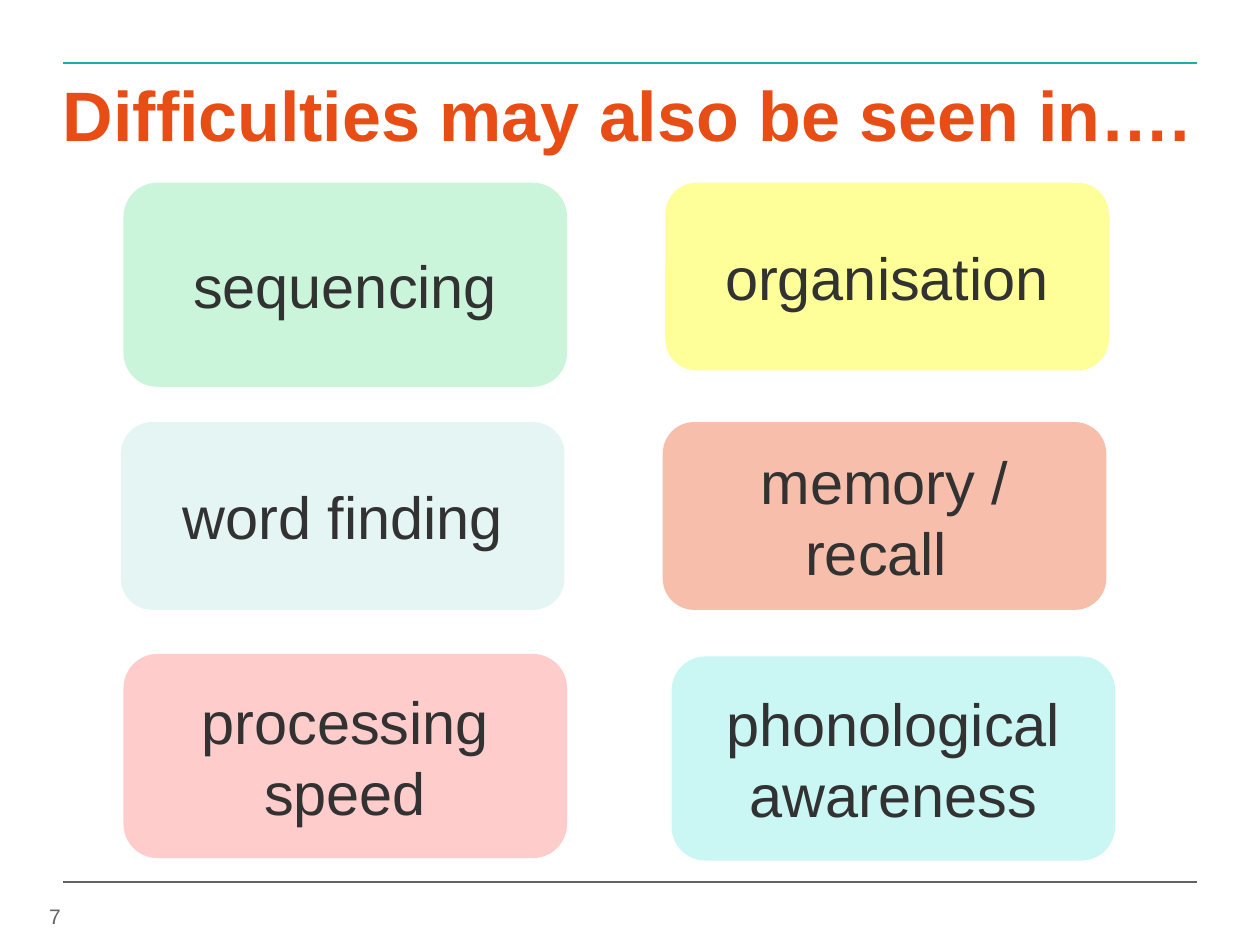
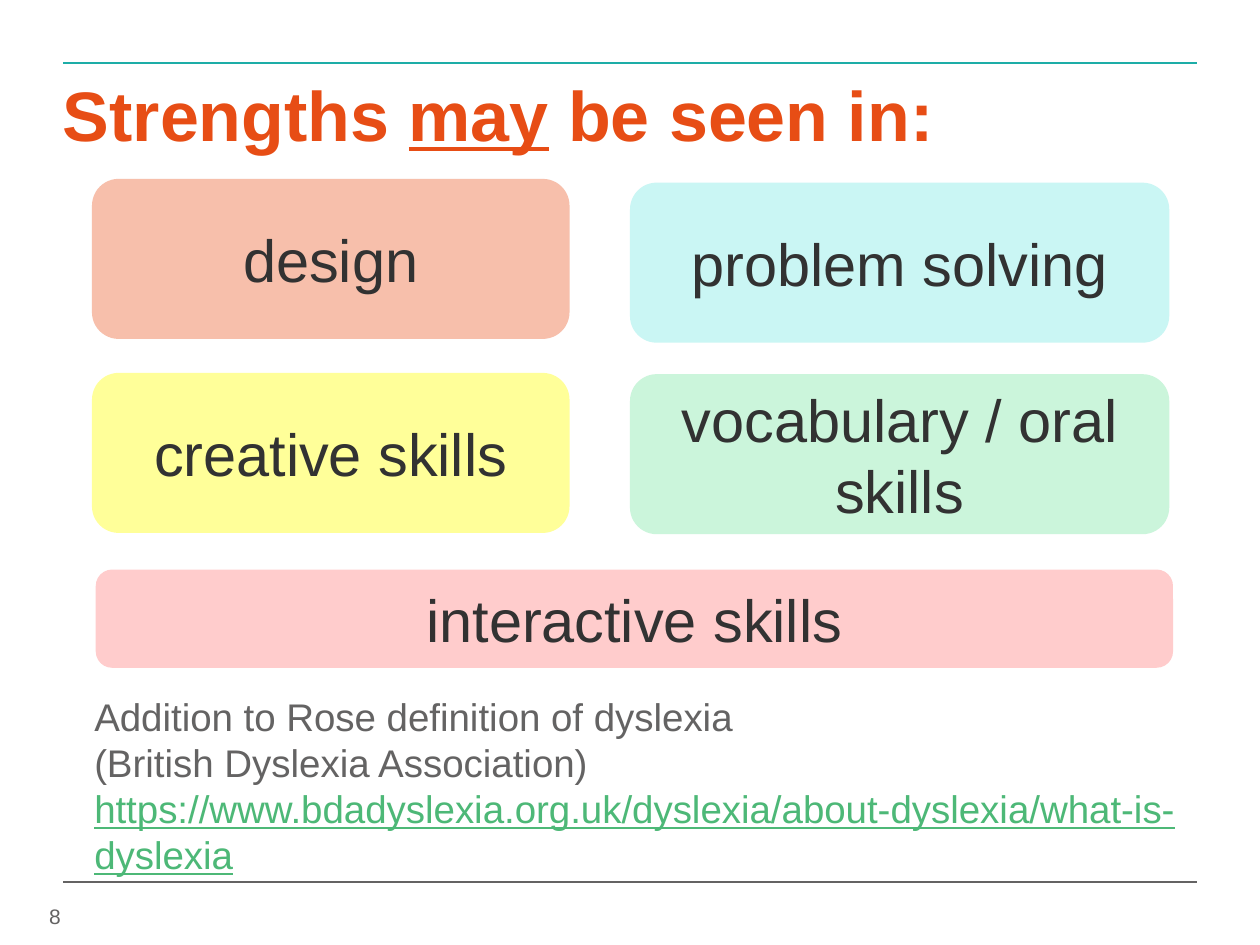
from pptx import Presentation
from pptx.dml.color import RGBColor
from pptx.enum.shapes import MSO_CONNECTOR, MSO_SHAPE
from pptx.enum.text import MSO_ANCHOR, PP_ALIGN
from pptx.oxml.ns import qn
from pptx.util import Inches, Pt
from lxml import etree

STRAIGHT = MSO_CONNECTOR.STRAIGHT
ROUNDED = MSO_SHAPE.ROUNDED_RECTANGLE
MIDDLE = MSO_ANCHOR.MIDDLE
LEFT, CENTER = PP_ALIGN.LEFT, PP_ALIGN.CENTER

TEAL = RGBColor(0x1D, 0xAD, 0xA7)
GREY = RGBColor(0x64, 0x63, 0x63)
ORANGE = RGBColor(0xE7, 0x4D, 0x15)
DARK = RGBColor(0x32, 0x32, 0x32)
LINK = RGBColor(0x4D, 0xB8, 0x77)
SALMON = RGBColor(0xF7, 0xBF, 0xAB)
YELLOW = RGBColor(0xFF, 0xFF, 0x99)
GREEN = RGBColor(0xCB, 0xF5, 0xDB)
MIST = RGBColor(0xE4, 0xF5, 0xF4)
PINK = RGBColor(0xFF, 0xCC, 0xCC)
AQUA = RGBColor(0xCA, 0xF6, 0xF4)

FONT = "Arial"
WIDTH, HEIGHT, MARGIN = 10, 7.5, 0.5
FIRST_NUMBER = 7

SLIDES = [
    {
        "title": [("Difficulties may also be seen in….", False)],
        "columns": [(0.98, 3.52), (5.28, 3.52)],
        "rows": [(1.45, 1.49), (3.35, 1.49), (5.2, 1.62)],
        "cards": [
            ("sequencing", GREEN, 0, 0, (0, 0), 0.13),
            ("organisation", YELLOW, 1, 0, (0, 0), 0),
            ("word finding", MIST, 0, 1, (-0.02, 0), 0),
            ("memory / recall ", SALMON, 1, 1, (-0.02, 0), 0),
            ("processing speed", PINK, 0, 2, (0, -0.01), 0),
            ("phonological awareness", AQUA, 1, 2, (0.05, 0.01), 0),
        ],
        "note": [],
    },
    {
        "title": [("Strengths ", False), ("may", True), (" be seen in:", False)],
        "columns": [(0.73, 3.79), (5, 4.28), (0.76, 8.55)],
        "rows": [(1.42, 1.27), (2.96, 1.27), (4.52, 0.78)],
        "cards": [
            ("design", SALMON, 0, 0, (0, 0), 0),
            ("problem solving", AQUA, 1, 0, (0, 0.03), 0),
            ("creative skills", YELLOW, 0, 1, (0, 0), 0),
            ("vocabulary / oral skills", GREEN, 1, 1, (0, 0.01), 0),
            ("interactive skills", PINK, 2, 2, (0, 0), 0),
        ],
        "note": [
            ("Addition to Rose definition of dyslexia", False),
            ("(British Dyslexia Association)", False),
            ("https://www.bdadyslexia.org.uk/dyslexia/about-dyslexia/what-is-dyslexia", True),
        ],
    },
]


def style_paragraph(p, size, color, align=LEFT, bold=False):
    p.alignment = align
    for r in p.runs:
        r.font.name = FONT
        r.font.size = Pt(size)
        r.font.color.rgb = color
        r.font.bold = bold


def add_text_box(s, left, top, width, height, inset=True):
    box = s.shapes.add_textbox(*map(Inches, (left, top, width, height)))
    tf = box.text_frame
    tf.word_wrap = True
    if not inset:
        tf.margin_left = tf.margin_right = tf.margin_top = tf.margin_bottom = 0
    return tf


def add_rule(s, y, color):
    line = s.shapes.add_connector(
        STRAIGHT, Inches(MARGIN), Inches(y), Inches(WIDTH - MARGIN), Inches(y))
    line.line.color.rgb = color
    line.line.width = Pt(1)
    etree.SubElement(line._element.spPr, qn("a:effectLst"))


def add_frame(s, title, number):
    add_rule(s, MARGIN, TEAL)
    add_rule(s, HEIGHT - MARGIN, GREY)
    p = add_text_box(s, MARGIN, 0.57, WIDTH - 2 * MARGIN, 0.67, False).paragraphs[0]
    for text, underlined in title:
        r = p.add_run()
        r.text = text
        r.font.underline = underlined
    style_paragraph(p, 40, ORANGE, bold=True)
    p = add_text_box(s, 0.39, 7.17, 0.59, 0.21, False).paragraphs[0]
    p.text = str(number)
    style_paragraph(p, 12, GREY)


def add_card(s, text, fill, left, top, width, height):
    sp = s.shapes.add_shape(ROUNDED, *map(Inches, (left, top, width, height)))
    sp.shadow.inherit = False
    sp.fill.solid()
    sp.fill.fore_color.rgb = fill
    sp.line.fill.background()
    tf = sp.text_frame
    tf.word_wrap = True
    tf.vertical_anchor = MIDDLE
    tf.text = text
    style_paragraph(tf.paragraphs[0], 34, DARK, CENTER)


def add_note(s, lines):
    tf = add_text_box(s, 0.65, 5.45, 9, 1.55)
    tf.text = "\n".join(text for text, _ in lines)
    for p, (_, is_link) in zip(tf.paragraphs, lines):
        style_paragraph(p, 22, LINK if is_link else GREY)
        p.runs[0].font.underline = is_link


def main():
    prs = Presentation()
    prs.slide_width, prs.slide_height = Inches(WIDTH), Inches(HEIGHT)
    for number, content in enumerate(SLIDES, FIRST_NUMBER):
        s = prs.slides.add_slide(prs.slide_layouts[6])
        add_frame(s, content["title"], number)
        for text, fill, column, row, (dx, dy), extra in content["cards"]:
            left, width = content["columns"][column]
            top, height = content["rows"][row]
            add_card(s, text, fill, left + dx, top + dy, width, height + extra)
        if content["note"]:
            add_note(s, content["note"])
    prs.save("out.pptx")


if __name__ == "__main__":
    main()
